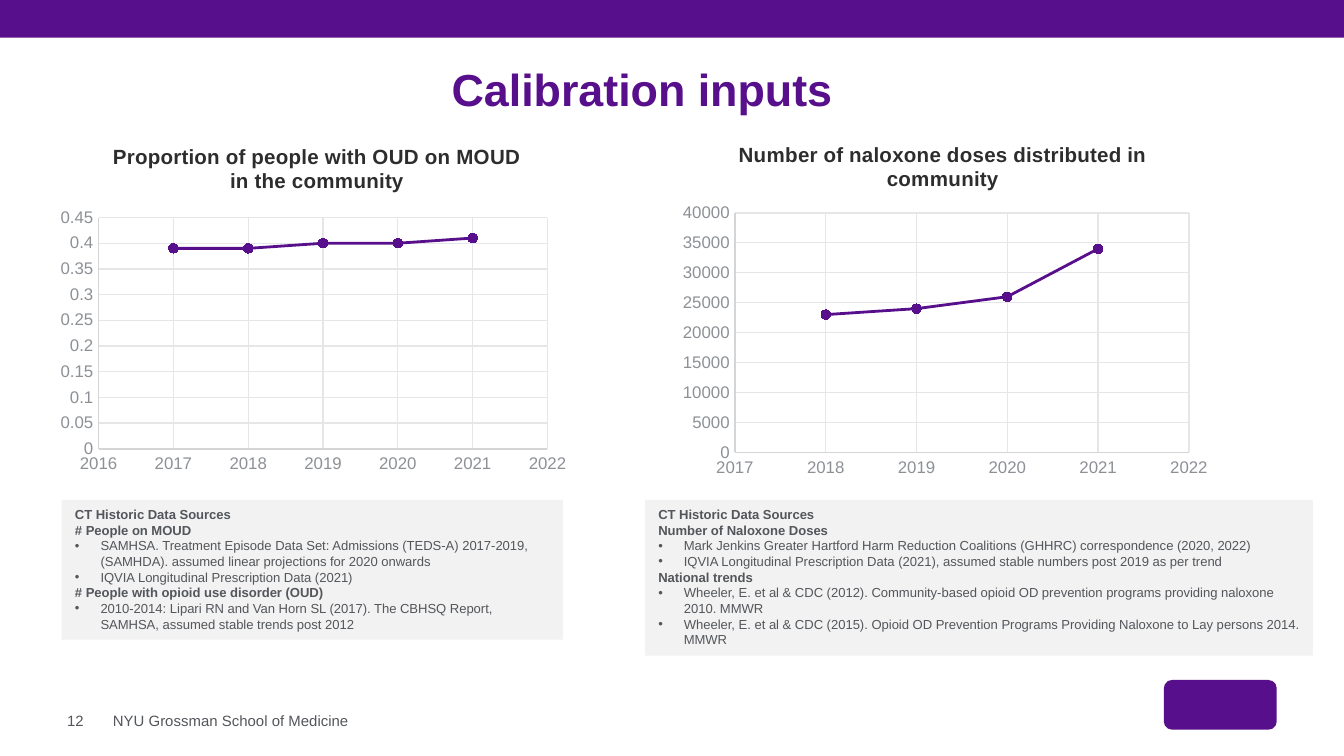
import pptx
import pptx.chart.data
import pptx.dml.color
import pptx.enum.chart
import pptx.enum.shapes
import pptx.enum.text
import pptx.oxml
import pptx.oxml.ns
import pptx.util
from pptx.util import Inches

PURPLE = pptx.dml.color.RGBColor(0x58, 0x0F, 0x8B)
TEXT_GREY = pptx.dml.color.RGBColor(0x53, 0x56, 0x5A)
LABEL_GREY = pptx.dml.color.RGBColor(0x8D, 0x91, 0x96)
AXIS_GREY = pptx.dml.color.RGBColor(0xD3, 0xD5, 0xD7)
GRID_GREY = pptx.dml.color.RGBColor(0xE5, 0xE6, 0xE7)
PANEL_GREY = pptx.dml.color.RGBColor(0xF2, 0xF2, 0xF2)
CHART_TITLE = pptx.dml.color.RGBColor(0x2D, 0x2D, 0x2D)

MOUD_SOURCES = [
    ("CT Historic Data Sources", True),
    ("# People on MOUD", True),
    ("SAMHSA. Treatment Episode Data Set: Admissions (TEDS-A) 2017-2019, "
     "(SAMHDA). assumed linear projections for 2020 onwards", False),
    ("IQVIA Longitudinal Prescription Data (2021)", False),
    ("# People with opioid use disorder (OUD)", True),
    ("2010-2014: Lipari RN and Van Horn SL (2017). The CBHSQ Report, "
     "SAMHSA, assumed stable trends post 2012", False),
]
NALOXONE_SOURCES = [
    ("CT Historic Data Sources", True),
    ("Number of Naloxone Doses", True),
    ("Mark Jenkins Greater Hartford Harm Reduction Coalitions (GHHRC) "
     "correspondence (2020, 2022)", False),
    ("IQVIA Longitudinal Prescription Data (2021), assumed stable numbers "
     "post 2019 as per trend", False),
    ("National trends", True),
    ("Wheeler, E. et al & CDC (2012). Community-based opioid OD prevention "
     "programs providing naloxone 2010. MMWR", False),
    ("Wheeler, E. et al & CDC (2015). Opioid OD Prevention Programs Providing "
     "Naloxone to Lay persons 2014. MMWR", False),
]


def style_font(font, size, color, bold=False):
    """Set Arial with the given size, colour and weight."""
    font.name = "Arial"
    font.size = pptx.util.Pt(size)
    font.bold = bold
    font.color.rgb = color


def add_block(slide, box, color, preset=pptx.enum.shapes.MSO_SHAPE.RECTANGLE):
    """Add a flat filled shape in the box."""
    block = slide.shapes.add_shape(preset, *map(Inches, box))
    block.shadow.inherit = False
    block.fill.solid()
    block.fill.fore_color.rgb = color
    block.line.fill.background()
    return block


def clear_margins(frame):
    """Remove the inner margins of a text frame."""
    frame.margin_left = frame.margin_right = 0
    frame.margin_top = frame.margin_bottom = 0


def add_heading(slide, box):
    """Place and format the slide title."""
    heading = slide.shapes.title
    heading.left, heading.top, heading.width, heading.height = map(Inches, box)
    frame = heading.text_frame
    frame.text = "Calibration inputs"
    frame.auto_size = pptx.enum.text.MSO_AUTO_SIZE.NONE
    frame.word_wrap = False
    frame.vertical_anchor = pptx.enum.text.MSO_ANCHOR.BOTTOM
    clear_margins(frame)
    line = frame.paragraphs[0]
    line.alignment = pptx.enum.text.PP_ALIGN.LEFT
    line.line_spacing = 0.85
    style_font(line.runs[0].font, 24, PURPLE, True)


def add_footer(slide, box):
    """Add the page number and the school name."""
    left, top, width, height = box
    for text, offset, span in (("12", 0, 0.28),
                               ("NYU Grossman School of Medicine", 0.34, width - 0.34)):
        label = slide.shapes.add_textbox(
            *map(Inches, (left + offset, top, span, height)))
        frame = label.text_frame
        frame.text = text
        frame.word_wrap = True
        frame.vertical_anchor = pptx.enum.text.MSO_ANCHOR.MIDDLE
        clear_margins(frame)
        style_font(frame.paragraphs[0].runs[0].font, 8, TEXT_GREY)


def set_layout(parent, index, fractions, inner=False):
    """Give a chart part a manual layout in fractions of the chart."""
    for old in parent.findall(pptx.oxml.ns.qn("c:layout")):
        parent.remove(old)
    target = '<c:layoutTarget val="inner"/>' if inner else ""
    names = ("x", "y", "w", "h")[:len(fractions)]
    modes = "".join(f'<c:{name}Mode val="edge"/>' for name in names[:2])
    values = "".join(f'<c:{name} val="{value}"/>'
                     for name, value in zip(names, fractions))
    parent.insert(index, pptx.oxml.parse_xml(
        f'<c:layout {pptx.oxml.ns.nsdecls("c")}><c:manualLayout>'
        f'{target}{modes}{values}</c:manualLayout></c:layout>'))


def style_axis(axis, low, high, step):
    """Set the scale, grid and labels of an axis."""
    axis.minimum_scale, axis.maximum_scale, axis.major_unit = low, high, step
    axis.major_tick_mark = pptx.enum.chart.XL_TICK_MARK.NONE
    axis.minor_tick_mark = pptx.enum.chart.XL_TICK_MARK.NONE
    axis.has_major_gridlines = True
    for line, color in ((axis.format.line, AXIS_GREY),
                        (axis.major_gridlines.format.line, GRID_GREY)):
        line.color.rgb = color
        line.width = pptx.util.Pt(0.75)
    style_font(axis.tick_labels.font, 9, LABEL_GREY)


def add_trend(slide, box, title, points, years, scale, title_at, plot_at):
    """Add a line chart of yearly values in the box."""
    trend_data = pptx.chart.data.XyChartData()
    trend = trend_data.add_series("Series 1")
    for year, value in points:
        trend.add_data_point(year, value)
    chart = slide.shapes.add_chart(
        pptx.enum.chart.XL_CHART_TYPE.XY_SCATTER_LINES,
        *map(Inches, box), trend_data).chart
    style_font(chart.font, 10, TEXT_GREY)
    chart.has_legend = False
    chart.has_title = True
    chart.chart_title.include_in_layout = False
    heading = chart.chart_title.text_frame
    heading.text = title
    style_font(heading.paragraphs[0].runs[0].font, 11, CHART_TITLE, True)
    style_axis(chart.category_axis, *years, 1)
    style_axis(chart.value_axis, 0, *scale)
    chart.plots[0].vary_by_categories = False
    line = chart.plots[0].series[0]
    line.smooth = False
    line.format.line.color.rgb = PURPLE
    line.format.line.width = pptx.util.Pt(1.5)
    line.marker.style = pptx.enum.chart.XL_MARKER_STYLE.CIRCLE
    line.marker.size = 5
    line.marker.format.fill.solid()
    line.marker.format.fill.fore_color.rgb = PURPLE
    line.marker.format.line.color.rgb = PURPLE
    chart_root = chart._chartSpace.chart
    set_layout(chart_root.find(pptx.oxml.ns.qn("c:title")), 1, title_at)
    set_layout(chart_root.plotArea, 0, plot_at, True)


def add_sources(slide, box, entries):
    """Add a grey panel of bold headings and bulleted sources."""
    frame = add_block(slide, box, PANEL_GREY).text_frame
    frame.word_wrap = True
    frame.vertical_anchor = pptx.enum.text.MSO_ANCHOR.TOP
    frame.text = "\n".join(text for text, _ in entries)
    for line, (_, is_heading) in zip(frame.paragraphs, entries):
        line.alignment = pptx.enum.text.PP_ALIGN.LEFT
        if not is_heading:
            properties = line._p.get_or_add_pPr()
            properties.set("marL", str(Inches(0.19)))
            properties.set("indent", str(-Inches(0.19)))
            for bullet in ('buFont {} typeface="Arial"', 'buChar {} char="•"'):
                properties.append(pptx.oxml.parse_xml(
                    f'<a:{bullet.format(pptx.oxml.ns.nsdecls("a"))}/>'))
        style_font(line.runs[0].font, 7, TEXT_GREY, is_heading)


def main():
    """Build the calibration slide and save it."""
    deck = pptx.Presentation()
    deck.slide_width = Inches(10)
    deck.slide_height = deck.slide_width * 9 // 16
    slide = deck.slides.add_slide(deck.slide_layouts.get_by_name("Title Only"))
    add_block(slide, (0, 0, 10, 0.28), PURPLE)
    add_block(slide, (8.66, 5.06, 0.84, 0.37), PURPLE,
              pptx.enum.shapes.MSO_SHAPE.ROUNDED_RECTANGLE)
    add_heading(slide, (3.36, 0.52, 2.87, 0.34))
    add_footer(slide, (0.5, 5.3, 4.04, 0.13))
    add_trend(slide, (0.38, 0.93, 3.93, 2.65),
              "Proportion of people with OUD on MOUD in the community",
              zip(range(2017, 2022), (0.39, 0.39, 0.4, 0.4, 0.41)),
              (2016, 2022), (0.45, 0.05), (0.11, 0.04), (0.09, 0.26, 0.85, 0.65))
    add_sources(slide, (0.46, 3.72, 3.73, 1.04), MOUD_SOURCES)
    add_trend(slide, (4.98, 0.91, 4.07, 2.7),
              "Number of naloxone doses distributed in community",
              zip(range(2018, 2022), (23000, 24000, 26000, 34000)),
              (2017, 2022), (40000, 5000), (0.12, 0.04), (0.12, 0.25, 0.83, 0.66))
    add_sources(slide, (4.8, 3.72, 4.97, 1.16), NALOXONE_SOURCES)
    deck.save("out.pptx")


if __name__ == "__main__":
    main()
